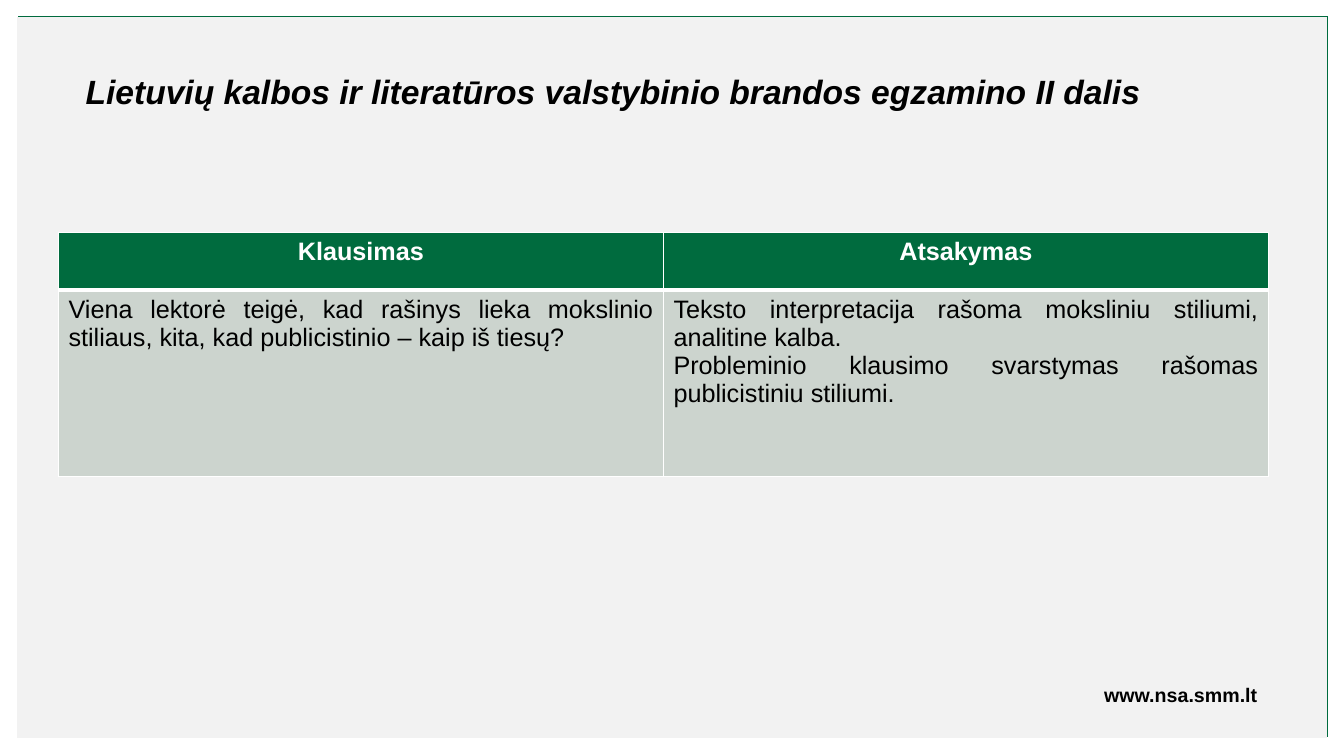
from pptx import Presentation
from pptx import util as u
from pptx.dml.color import RGBColor
from pptx.enum import shapes, text
from pptx.oxml import parse_xml
from pptx.oxml.ns import nsdecls

TITLE = "Lietuvių kalbos ir literatūros valstybinio brandos egzamino II dalis"
SITE = "www.nsa.smm.lt"
ROWS = [
    [["Klausimas"], ["Atsakymas"]],
    [
        ["Viena lektorė teigė, kad rašinys lieka mokslinio stiliaus, "
         "kita, kad publicistinio – kaip iš tiesų?"],
        ["Teksto interpretacija rašoma moksliniu stiliumi, analitine kalba.",
         "Probleminio klausimo svarstymas rašomas publicistiniu stiliumi."],
    ],
]
GREEN, PANEL, SAGE, WHITE, BLACK = "006B3E", "F2F2F2", "CCD4CE", "FFFFFF", "000000"
ROW_HEIGHTS = [0.57, 1.85]
COLUMN_WIDTH = 6
PANEL_SIZE = (12.99, 7.15)


def color(value):
    return RGBColor.from_string(value)


def set_font(para, size, value, bold=False, italic=False):
    font = para.font
    font.name, font.size = "Arial", u.Pt(size)
    font.bold, font.italic = bold, italic
    font.color.rgb = color(value)


def add_panel(page, left, top, fill):
    panel = page.shapes.add_shape(
        shapes.MSO_SHAPE.RECTANGLE, *map(u.Inches, (left, top, *PANEL_SIZE)))
    panel.shadow.inherit = False
    panel.fill.solid()
    panel.fill.fore_color.rgb = color(fill)
    panel.line.fill.background()


def add_label(page, area, words, size, align, italic=False):
    box = page.shapes.add_textbox(*map(u.Inches, area))
    box.text_frame.word_wrap = True
    box.text_frame.auto_size = text.MSO_AUTO_SIZE.SHAPE_TO_FIT_TEXT
    para = box.text_frame.paragraphs[0]
    para.text, para.alignment = words, align
    set_font(para, size, BLACK, bold=True, italic=italic)


def set_borders(cell, bottom, top):
    """Draw white cell borders; bottom and top widths are in points."""
    properties = cell._tc.get_or_add_tcPr()
    for index, (side, width) in enumerate(
            {"L": 1, "R": 1, "T": top, "B": bottom}.items()):
        properties.insert(index, parse_xml(
            f'<a:ln{side} {nsdecls("a")} w="{u.Pt(width)}"><a:solidFill>'
            f'<a:srgbClr val="{WHITE}"/></a:solidFill></a:ln{side}>'))


def fill_cell(cell, lines, is_header):
    cell.fill.solid()
    cell.fill.fore_color.rgb = color(GREEN if is_header else SAGE)
    cell.text_frame.text = "\n".join(lines)
    for para in cell.text_frame.paragraphs:
        para.alignment = text.PP_ALIGN.CENTER if is_header else text.PP_ALIGN.JUSTIFY
        set_font(para, 18, WHITE if is_header else BLACK, bold=is_header)
    set_borders(cell, bottom=3 if is_header else 1, top=1 if is_header else 3)


def add_answers(page):
    columns = len(ROWS[0])
    table = page.shapes.add_table(
        len(ROWS), columns, u.Inches(0.58), u.Inches(2.31),
        u.Inches(COLUMN_WIDTH * columns), u.Inches(sum(ROW_HEIGHTS))).table
    for column in table.columns:
        column.width = u.Inches(COLUMN_WIDTH)
    for r, (height, row) in enumerate(zip(ROW_HEIGHTS, ROWS)):
        table.rows[r].height = u.Inches(height)
        for c, lines in enumerate(row):
            fill_cell(table.cell(r, c), lines, is_header=r == 0)


def main():
    deck = Presentation()
    deck.slide_width, deck.slide_height = u.Inches(13.33), u.Inches(7.5)
    page = deck.slides.add_slide(deck.slide_layouts[6])
    add_panel(page, 0.18, 0.16, GREEN)
    add_panel(page, 0.17, 0.17, PANEL)
    add_label(page, (9.37, 6.73, 3.2, 0.34), SITE, 14, text.PP_ALIGN.RIGHT)
    add_label(page, (0.75, 0.65, 11.19, 0.5), TITLE, 24, text.PP_ALIGN.LEFT, italic=True)
    add_answers(page)
    deck.save("out.pptx")


if __name__ == "__main__":
    main()
